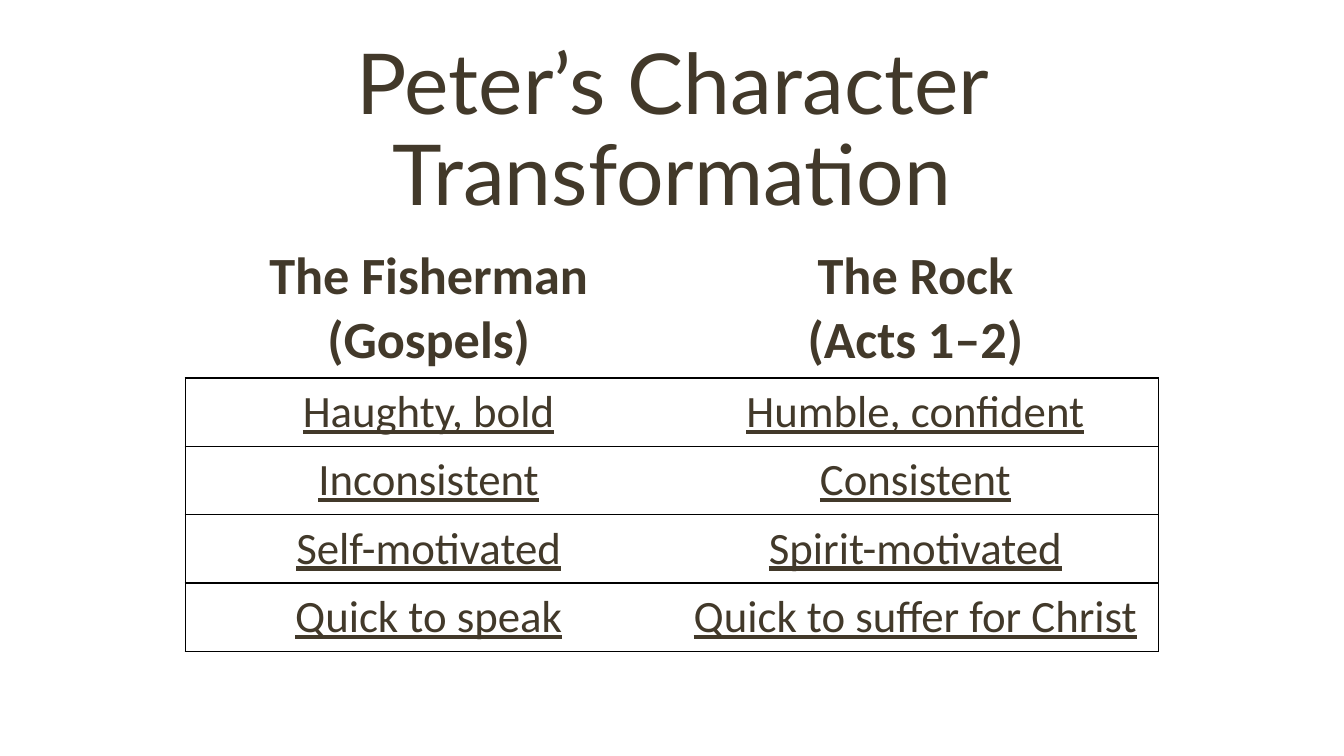
from lxml import etree
from pptx import Presentation
from pptx.dml.color import RGBColor
from pptx.enum.text import MSO_ANCHOR, PP_ALIGN
from pptx.oxml.ns import qn
from pptx.util import Cm, Pt

CENTER = PP_ALIGN.CENTER
MIDDLE = MSO_ANCHOR.MIDDLE
COLORS = {"text": "42392A", "line": "000000"}
SIDES = "LRTB"
ROWS = [
    ("The Fisherman (Gospels)", "The Rock\n(Acts 1–2)"),
    ("Haughty, bold", "Humble, confident"),
    ("Inconsistent", "Consistent"),
    ("Self-motivated", "Spirit-motivated"),
    ("Quick to speak", "Quick to suffer for Christ"),
]


class Deck:
    def __init__(self, width, height):
        self.prs = Presentation()
        self.prs.slide_width, self.prs.slide_height = Cm(width), Cm(height)
        self.slide = self.prs.slides.add_slide(self.prs.slide_layouts[6])

    def label(self, para, text, size, font="Calibri", bold=False, under=False):
        """Fill a centred paragraph; a newline becomes a line break."""
        para.alignment = CENTER
        for i, line in enumerate(text.split("\n")):
            if i:
                para.add_line_break()
            run = para.add_run()
            run.text = line
            run.font.name, run.font.size = font, Pt(size)
            run.font.bold, run.font.underline = bold, under
            run.font.color.rgb = RGBColor.from_string(COLORS["text"])

    def title(self, text, left, top, width, height):
        box = self.slide.shapes.add_textbox(Cm(left), Cm(top), Cm(width), Cm(height))
        frame = box.text_frame
        frame.word_wrap = True
        frame.vertical_anchor = MIDDLE
        para = frame.paragraphs[0]
        para.line_spacing = 0.9
        self.label(para, text, 45, "Lato")

    def border(self, cell, widths):
        """Draw the sides named in widths (points) and clear the others."""
        props = cell._tc.get_or_add_tcPr()
        for i, side in enumerate(SIDES):
            line = etree.Element(qn(f"a:ln{side}"))
            if side in widths:
                line.set("w", str(Pt(widths[side])))
                fill = etree.SubElement(line, qn("a:solidFill"))
                etree.SubElement(fill, qn("a:srgbClr"), val=COLORS["line"])
            else:
                etree.SubElement(line, qn("a:noFill"))
            props.insert(i, line)

    def table(self, rows, left, top, width, head, body):
        """Draw an open heading row over boxed rows; head and body are heights."""
        count = len(rows)
        height = head + body * (count - 1)
        grid = self.slide.shapes.add_table(
            count, 2, Cm(left), Cm(top), Cm(width), Cm(height)).table
        grid.first_row = grid.horz_banding = False
        for r, texts in enumerate(rows):
            grid.rows[r].height = Cm(body if r else head)
            for c, text in enumerate(texts):
                cell = grid.cell(r, c)
                cell.fill.background()
                para = cell.text_frame.paragraphs[0]
                if r:
                    self.label(para, text, 24, under=True)
                    edge = "R" if c else "L"
                    upper = 1 if r == 1 else 0.75
                    self.border(cell, {edge: 0.75, "T": upper, "B": 0.75})
                else:
                    self.label(para, text, 28, bold=True)
                    self.border(cell, {"B": 1})


def main():
    deck = Deck(25.4, 14.29)
    deck.title("Peter’s Character Transformation", 1.27, 1.02, 22.86, 2.97)
    deck.table(ROWS, 3.5, 4.5, 18.4, 2.65, 1.29)
    deck.prs.save("out.pptx")


if __name__ == "__main__":
    main()
